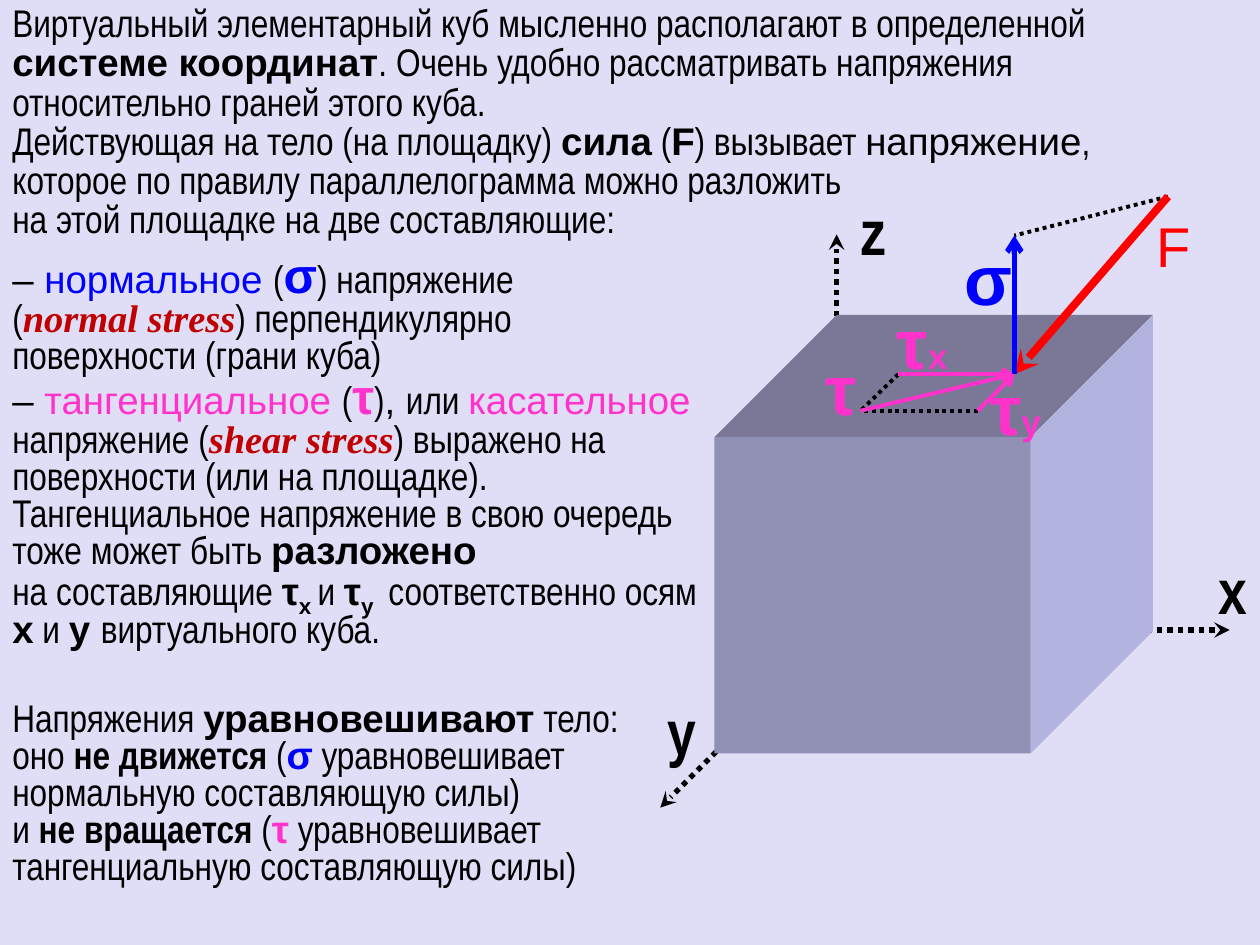
from lxml.etree import SubElement
from pptx import Presentation
from pptx.dml.color import RGBColor
from pptx.enum.dml import MSO_LINE as Dash
from pptx.enum.shapes import MSO_CONNECTOR as Connector, MSO_SHAPE as Shape
from pptx.enum.text import MSO_AUTO_SIZE as AutoSize, PP_ALIGN as Align
from pptx.oxml.ns import qn
from pptx.util import Inches, Pt

COLUMNS, ROWS = 100, 75
BLACK, BLUE, PINK, RED, CRIMSON = "000000", "0000FF", "FF33CC", "FF0000", "C00000"
ARIAL, NARROW, TIMES = "Arial", "Arial Narrow", "Times New Roman"

# Inline styles of the running text; a plain string is black Arial Narrow.
STYLES = {
    "plain": {},
    "wide": dict(name=ARIAL),
    "strong": dict(name=ARIAL, bold=True),
    "bold": dict(bold=True),
    "index": dict(name=ARIAL, bold=True, baseline=-25),
    "term": dict(name=TIMES, bold=True, italic=True, color=CRIMSON),
    "normal": dict(name=ARIAL, color=BLUE),
    "sigma": dict(name=ARIAL, bold=True, color=BLUE),
    "big sigma": dict(name=ARIAL, bold=True, color=BLUE, size=28),
    "shear": dict(name=ARIAL, color=PINK),
    "tau": dict(name=ARIAL, bold=True, color=PINK),
    "big tau": dict(name=ARIAL, bold=True, color=PINK, size=28),
    "small": dict(size=20),
}


def rgb(color):
    return RGBColor.from_string(color)


def set_font(font, name=None, size=None, color=None, bold=None, italic=None):
    font.name, font.bold, font.italic = name, bold, italic
    if size:
        font.size = Pt(size)
    if color:
        font.color.rgb = rgb(color)


class StressSlide:
    """Draws on one slide; all lengths are columns and rows of its grid."""

    def __init__(self, deck, background):
        self.cell_width = deck.slide_width / COLUMNS
        self.cell_height = deck.slide_height / ROWS
        self.slide = deck.slides.add_slide(deck.slide_layouts[6])
        self.shapes = self.slide.shapes
        fill = self.slide.background.fill
        fill.solid()
        fill.fore_color.rgb = rgb(background)

    def place(self, *lengths):
        """Turn alternating columns and rows into slide units."""
        cells = (self.cell_width, self.cell_height)
        return [round(length * cells[i % 2]) for i, length in enumerate(lengths)]

    def text(self, box, paragraphs, spacing=None, align=None, wrap=True, **font):
        frame = self.shapes.add_textbox(*self.place(*box)).text_frame
        frame.word_wrap = wrap
        frame.auto_size = AutoSize.SHAPE_TO_FIT_TEXT
        for i, parts in enumerate(paragraphs):
            paragraph = frame.paragraphs[0] if i == 0 else frame.add_paragraph()
            paragraph.line_spacing = spacing
            paragraph.alignment = align
            set_font(paragraph.font, **font)
            for part in parts:
                words, style = (part, "plain") if isinstance(part, str) else part
                look = dict(STYLES[style])
                baseline = look.pop("baseline", None)
                run = paragraph.add_run()
                run.text = words
                if look:
                    set_font(run.font, **look)
                if baseline:
                    run.font._element.set("baseline", str(baseline * 1000))

    def body(self, box, paragraphs, spacing=0.8):
        self.text(box, paragraphs, spacing, name=NARROW, size=22, color=BLACK)

    def label(self, box, parts, color, size=40, name=ARIAL, bold=True,
              spacing=None, wrap=False):
        self.text(box, [parts], spacing, Align.CENTER, wrap,
                  name=name, size=size, color=color, bold=bold)

    def line(self, start, end, color, width, dotted=False, head=None, tail=None):
        connector = self.shapes.add_connector(
            Connector.STRAIGHT, *self.place(*start, *end))
        connector.line.color.rgb = rgb(color)
        connector.line.width = Pt(width)
        if dotted:
            connector.line.dash_style = Dash.ROUND_DOT
        outline = connector.line._get_or_add_ln()
        for end_tag, arrow in (("a:headEnd", head), ("a:tailEnd", tail)):
            if arrow:
                SubElement(outline, qn(end_tag), type=arrow)
        SubElement(connector._element.spPr, qn("a:effectLst"))

    def paint(self, shape, color):
        shape.shadow.inherit = False
        shape.fill.solid()
        shape.fill.fore_color.rgb = rgb(color)
        shape.line.fill.background()

    def face(self, corners, color):
        points = [self.place(*corner) for corner in corners]
        builder = self.shapes.build_freeform(*points[0])
        builder.add_line_segments(points[1:])
        self.paint(builder.convert_to_shape(), color)

    def cube(self, left, top, side, depth, front, roof, flank):
        right, bottom = left + side, top + side
        back_right = (right + depth, top - depth)
        self.face([(left, top), (left + depth, top - depth),
                   back_right, (right, top)], roof)
        self.face([(right, top), back_right,
                   (right + depth, bottom - depth), (right, bottom)], flank)
        self.paint(self.shapes.add_shape(
            Shape.RECTANGLE, *self.place(left, top, side, side)), front)


def main():
    deck = Presentation()
    deck.slide_width, deck.slide_height = Inches(10), Inches(7.5)
    slide = StressSlide(deck, "DFDEF6")

    slide.body((0, 19.8, 56.6, 32.2), [
        [("– ", "wide"), ("нормальное ", "normal"), "(", ("σ", "big sigma"),
         ") напряжение"],
        ["(", ("normal stress", "term"),
         ") перпендикулярно поверхности (грани куба)"],
        [("– ", "wide"), ("тангенциальное ", "shear"), "(", ("τ", "big tau"), ")",
         (", ", "wide"), "или ", ("касательное", "shear"), " напряжение (",
         ("shear stress", "term"),
         ") выражено на поверхности (или на площадке)."],
        ["Тангенциальное напряжение в свою очередь тоже может быть ",
         ("разложено", "strong")],
        ["на составляющие ", ("τ", "strong"), ("x ", "index"), "и ",
         ("τ", "strong"), ("y ", "index"), " соответственно осям ",
         ("х", "strong"), " и ", ("у ", "strong"), "виртуального куба."],
    ])

    # Axes run behind the cube, so only their outer ends show.
    for start, end in [((65.1, 51.4), (52.4, 64.1)),
                       ((66.4, 51.8), (66.4, 18.6)),
                       ((65.1, 50), (97.6, 50))]:
        slide.line(start, end, BLACK, 3, dotted=True, tail="stealth")
    slide.cube(56.7, 34.7, 25.1, 9.7, front="9090B4", roof="7A7896", flank="B3B3E0")

    origin, force, sigma = (80.5, 29.7), (92.7, 15.6), (80.5, 18.7)
    tau, tau_x, tau_y = (68.3, 32.6), (71.3, 29.7), (77.6, 32.6)
    for start, end in [(force, sigma), (tau_x, tau), (tau_y, tau)]:
        slide.line(start, end, BLACK, 2.25, dotted=True)

    for axis, left, top in [("x", 95.7, 45.9), ("z", 67.2, 17.4), ("y", 52, 57.1)]:
        slide.label((left, top, 4.2, 4), [axis], BLACK, 36, NARROW, spacing=0.5)

    slide.line(force, origin, RED, 4.5, tail="stealth")
    slide.label((90.8, 16.3, 4.1, 6.3), ["F"], RED, 32, bold=False, wrap=True)
    for component in (tau_x, tau_y, tau):
        slide.line(origin, component, PINK, 2.25, head="arrow")
    slide.line(sigma, origin, BLUE, 3, head="arrow")

    slide.label((75.6, 18.2, 5.4, 7.7), ["σ"], BLUE)
    slide.label((64.5, 29.3, 4.5, 5), ["τ"], PINK, spacing=0.6)
    slide.label((70.2, 25.9, 6, 4.7), ["τ", ("x", "small")], PINK, spacing=0.55)
    slide.label((77.6, 30.9, 6, 5), ["τ", ("y", "small")], PINK, spacing=0.6)

    slide.body((0, 55.3, 51.7, 15.7), [
        ["Напряжения ", ("уравновешивают", "strong"), " тело: оно ",
         ("не движется", "bold"), " (", ("σ", "sigma"),
         " уравновешивает нормальную составляющую силы)"],
        ["и ", ("не вращается", "bold"), " (", ("τ", "tau"),
         " уравновешивает тангенциальную составляющую силы)"],
    ])
    slide.body((0, 0, 89.7, 19.9), [
        ["Виртуальный элементарный куб мысленно располагают в определенной ",
         ("системе координат", "strong"),
         ". Очень удобно рассматривать напряжения относительно граней этого куба."],
        ["Действующая на тело (на площадку) ", ("сила", "strong"), " (",
         ("F", "strong"), ") вызывает ", ("напряжение", "wide"), ","],
        ["которое по правилу параллелограмма можно разложить"],
        ["на этой площадке на две составляющие:"],
    ], spacing=0.85)

    deck.save("out.pptx")


if __name__ == "__main__":
    main()
